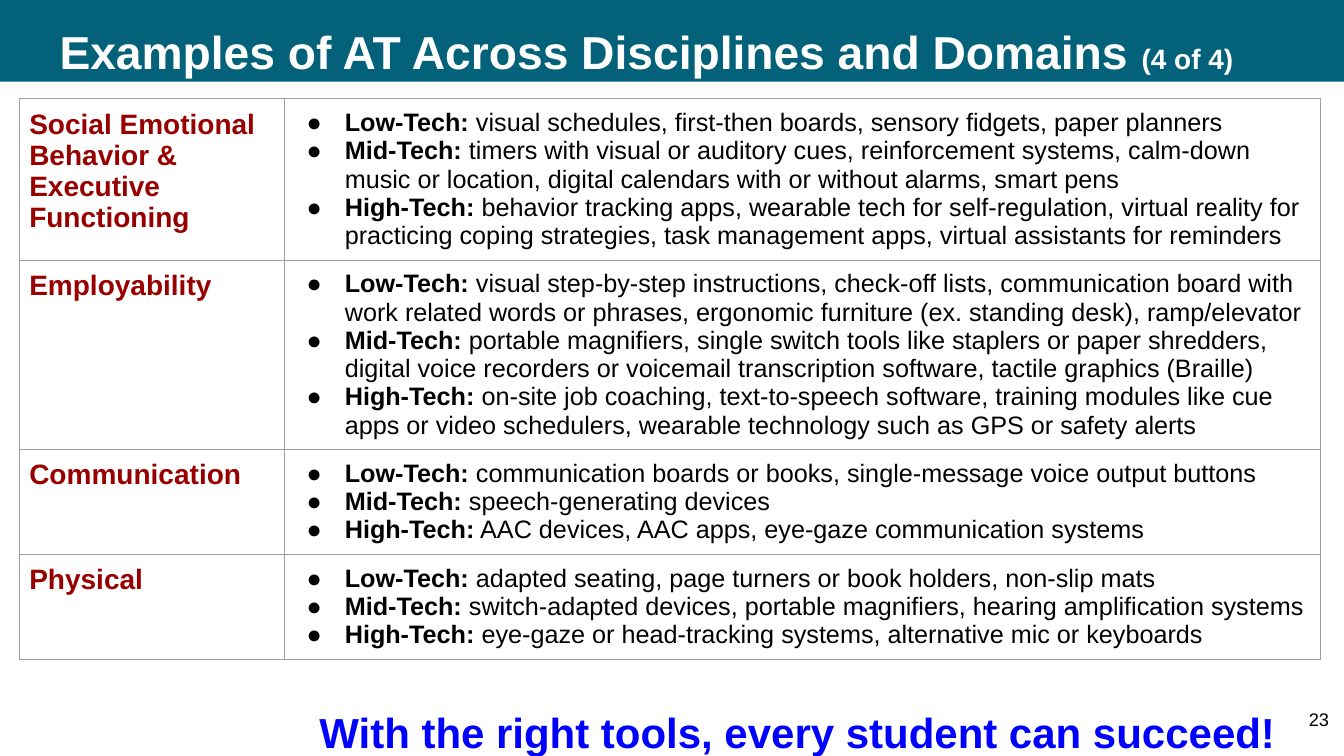
from lxml import etree
from pptx import Presentation
from pptx.dml.color import RGBColor
from pptx.enum import shapes, text
from pptx.oxml import ns
from pptx.util import Inches, Pt

FONT = "Arial"
ROWS = [
    ("Social Emotional Behavior & Executive Functioning", 1.6, [
        "visual schedules, first-then boards, sensory fidgets, paper planners",
        "timers with visual or auditory cues, reinforcement systems, calm-down "
        "music or location, digital calendars with or without alarms, smart pens",
        "behavior tracking apps, wearable tech for self-regulation, virtual reality for "
        "practicing coping strategies, task management apps, virtual assistants for reminders",
    ]),
    ("Employability", 1.88, [
        "visual step-by-step instructions, check-off lists, communication board with "
        "work related words or phrases, ergonomic furniture (ex. standing desk), ramp/elevator",
        "portable magnifiers, single switch tools like staplers or paper shredders, "
        "digital voice recorders or voicemail transcription software, tactile graphics (Braille)",
        "on-site job coaching, text-to-speech software, training modules like "
        "cue apps or video schedulers, wearable technology such as GPS or safety alerts",
    ]),
    ("Communication", 1.04, [
        "communication boards or books, single-message voice output buttons",
        "speech-generating devices",
        "AAC devices, AAC apps, eye-gaze communication systems",
    ]),
    ("Physical", 1.04, [
        "adapted seating, page turners or book holders, non-slip mats",
        "switch-adapted devices, portable magnifiers, hearing amplification systems",
        "eye-gaze or head-tracking systems, alternative mic or keyboards",
    ]),
]
LEVELS = ["Low-Tech:", "Mid-Tech:", "High-Tech:"]


def color(value):
    return RGBColor.from_string(value)


def add_span(para, words, size, shade, bold=False):
    span = para.add_run()
    span.text = words
    span.font.name = FONT
    span.font.size = Pt(size)
    span.font.bold = bold
    span.font.color.rgb = color(shade)


def add_element(parent, tag, **attributes):
    return etree.SubElement(parent, ns.qn(tag), attributes)


def add_bullet(para):
    properties = para._p.get_or_add_pPr()
    properties.set("marL", str(Inches(0.5)))
    properties.set("indent", str(Inches(-0.38)))
    add_element(add_element(properties, "a:buClr"), "a:srgbClr", val="000000")
    add_element(properties, "a:buFont", typeface=FONT)
    add_element(properties, "a:buChar", char="●")


def format_cell(cell):
    cell.margin_left = cell.margin_right = Inches(0.1)
    cell.margin_top = cell.margin_bottom = Inches(0.1)
    properties = cell._tc.get_or_add_tcPr()
    for side in ("a:lnL", "a:lnR", "a:lnT", "a:lnB"):
        line = add_element(properties, side, w=str(Pt(0.75)))
        add_element(add_element(line, "a:solidFill"), "a:srgbClr", val="9E9E9E")
    cell.fill.background()


def add_header(page):
    band = page.shapes.add_shape(
        shapes.MSO_SHAPE.RECTANGLE, 0, 0, Inches(13.33), Inches(0.81))
    band.shadow.inherit = False
    band.fill.solid()
    band.fill.fore_color.rgb = color("03617A")
    band.line.fill.background()
    page.shapes._spTree.insert(2, band._element)

    title = page.shapes.title
    title.left, title.top = Inches(0.49), 0
    title.width, title.height = Inches(16.43), Inches(1.08)
    title.text_frame.vertical_anchor = text.MSO_ANCHOR.MIDDLE
    title.text_frame.auto_size = text.MSO_AUTO_SIZE.NONE
    para = title.text_frame.paragraphs[0]
    para.alignment = text.PP_ALIGN.LEFT
    para.line_spacing = 0.9
    add_span(para, "Examples of AT Across Disciplines and Domains ", 33, "FFFFFF", True)
    add_span(para, "(4 of 4)", 20, "FFFFFF", True)


def add_examples(page):
    height = sum(row_height for _, row_height, _ in ROWS)
    table = page.shapes.add_table(
        len(ROWS), 2, Inches(0.19), Inches(0.98), Inches(12.91), Inches(height)).table
    table.first_row = table.horz_banding = False
    table.columns[0].width = Inches(2.63)
    table.columns[1].width = Inches(10.28)
    for row, (domain, row_height, examples) in zip(table.rows, ROWS):
        row.height = Inches(row_height)
        domain_cell, examples_cell = row.cells
        format_cell(domain_cell)
        format_cell(examples_cell)
        add_span(domain_cell.text_frame.paragraphs[0], domain, 20, "980000", True)
        frame = examples_cell.text_frame
        for index, (level, example) in enumerate(zip(LEVELS, examples)):
            para = frame.add_paragraph() if index else frame.paragraphs[0]
            add_bullet(para)
            add_span(para, level, 18, "000000", True)
            add_span(para, " " + example, 18, "000000")


def add_text(page, words, left, top, width, height, size, shade, bold, alignment):
    box = page.shapes.add_textbox(Inches(left), Inches(top), Inches(width), Inches(height))
    frame = box.text_frame
    frame.word_wrap = True
    frame.margin_left = frame.margin_right = Inches(0.1)
    frame.margin_top = frame.margin_bottom = Inches(0.1)
    para = frame.paragraphs[0]
    para.alignment = alignment
    add_span(para, words, size, shade, bold)


def main():
    deck = Presentation()
    deck.slide_width, deck.slide_height = Inches(13.33), Inches(7.5)
    page = deck.slides.add_slide(deck.slide_layouts[5])
    add_header(page)
    add_examples(page)
    add_text(page, "With the right tools, every student can succeed!",
             3.07, 6.91, 9.92, 0.71, 30, "0000FF", True, text.PP_ALIGN.LEFT)
    add_text(page, "23", 12.48, 6.93, 0.8, 0.57, 13, "000000", False, text.PP_ALIGN.RIGHT)
    deck.save("out.pptx")


if __name__ == "__main__":
    main()
